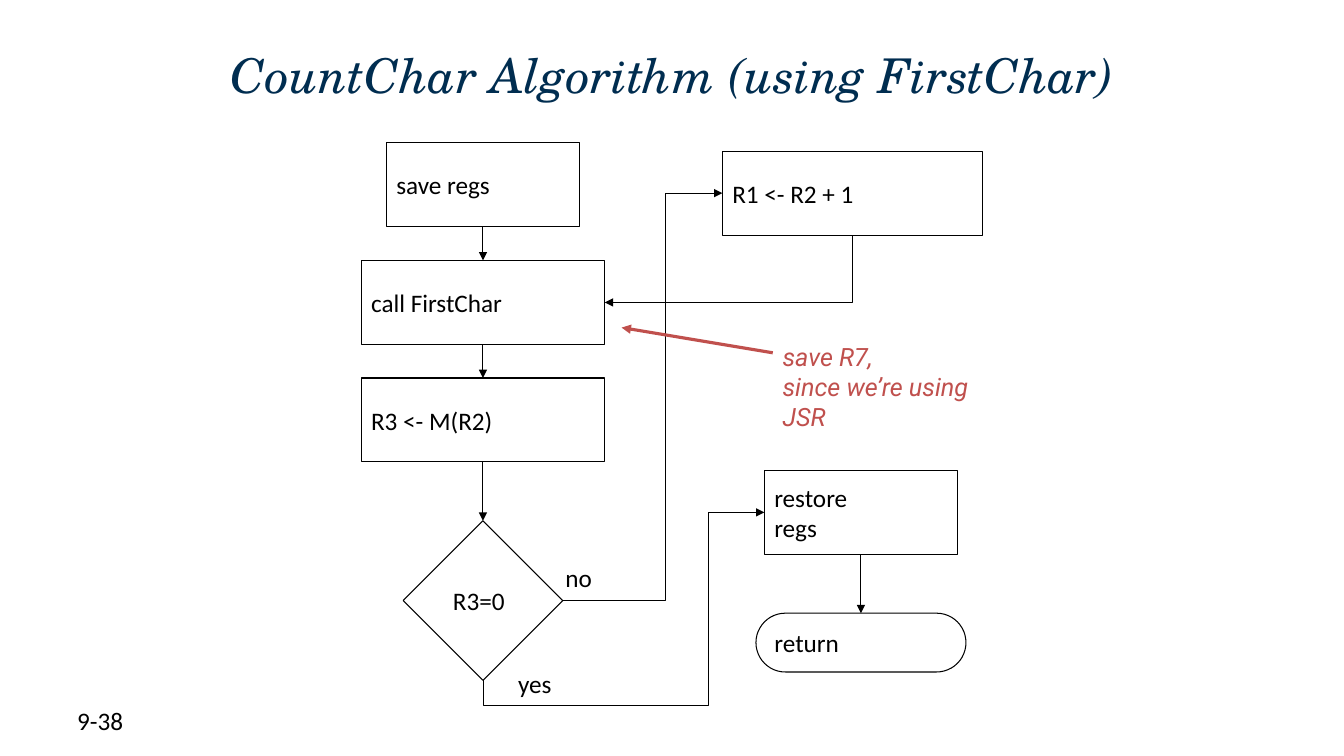
from dataclasses import dataclass

from lxml.etree import SubElement
from pptx import Presentation
from pptx.dml.color import RGBColor
from pptx.enum.shapes import MSO_CONNECTOR as Link, MSO_SHAPE as Shape
from pptx.enum.text import MSO_ANCHOR as Anchor, PP_ALIGN as Align
from pptx.oxml.ns import qn
from pptx.util import Pt

TOP, LEFT, BOTTOM, RIGHT = range(4)


@dataclass(frozen=True)
class Theme:
    """Colours, fonts and sizes of the slide."""
    ink: str = "000000"
    title: str = "002D50"
    accent: str = "C0504D"
    body_font: str = "Calibri"
    title_font: str = "TeX Gyre Schola"
    note_font: str = "Roboto"
    body_size: float = 18
    title_size: float = 34.2
    thin: float = 0.75
    thick: float = 2.25


class Flowchart:
    """Draws flowchart elements on one slide, in points."""

    def __init__(self, slide, theme):
        """Keep the slide and its style."""
        self.shapes = slide.shapes
        self.theme = theme

    def add_words(self, shape, text, color=None, font=None, size=None,
                  italic=False, align=Align.LEFT, anchor=Anchor.MIDDLE,
                  wrap=True):
        """Fill a shape with styled lines of text."""
        frame = shape.text_frame
        frame.word_wrap = wrap
        frame.vertical_anchor = anchor
        for index, line in enumerate(text.split("\n")):
            paragraph = frame.add_paragraph() if index else frame.paragraphs[0]
            paragraph.alignment = align
            run = paragraph.add_run()
            run.text = line
            run.font.name = font or self.theme.body_font
            run.font.size = Pt(size or self.theme.body_size)
            run.font.italic = italic
            run.font.color.rgb = RGBColor.from_string(color or self.theme.ink)

    def label(self, text, left, top, width, height, anchor=Anchor.TOP, **style):
        """Add a text box."""
        box = self.shapes.add_textbox(Pt(left), Pt(top), Pt(width), Pt(height))
        self.add_words(box, text, anchor=anchor, **style)

    def step(self, text, center, top, width, height=60, kind=Shape.RECTANGLE):
        """Add an outlined flowchart step around a vertical axis."""
        step = self.shapes.add_shape(
            kind, Pt(center - width / 2), Pt(top), Pt(width), Pt(height))
        step.shadow.inherit = False
        step.fill.background()
        step.line.color.rgb = RGBColor.from_string(self.theme.ink)
        step.line.width = Pt(self.theme.thin)
        if kind == Shape.ROUNDED_RECTANGLE:
            step.adjustments[0] = 0.5
        self.add_words(step, text)
        return step

    def arrow(self, start=(0, 0), end=(0, 0), kind=Link.STRAIGHT,
              color=None, width=None):
        """Add a line with an arrowhead at its end."""
        arrow = self.shapes.add_connector(kind, *map(Pt, (*start, *end)))
        arrow.line.color.rgb = RGBColor.from_string(color or self.theme.ink)
        arrow.line.width = Pt(width or self.theme.thin)
        properties = arrow._element.spPr
        SubElement(properties.find(qn("a:ln")), qn("a:tailEnd"), type="triangle")
        SubElement(properties, qn("a:effectLst"))
        return arrow

    def join(self, source, target, exit_side=BOTTOM, entry_side=TOP,
             kind=Link.STRAIGHT):
        """Glue an arrow between two steps."""
        arrow = self.arrow(kind=kind)
        arrow.begin_connect(source, exit_side)
        arrow.end_connect(target, entry_side)
        return arrow

    def elbow(self, source, target, exit_side, entry_side, preset, *bends):
        """Glue a bent arrow, turned a quarter when it leaves downwards."""
        arrow = self.join(source, target, exit_side, entry_side, Link.ELBOW)
        properties = arrow._element.spPr
        geometry = properties.find(qn("a:prstGeom"))
        geometry.set("prst", preset)
        guides = geometry.find(qn("a:avLst"))
        for number, bend in enumerate(bends, 1):
            SubElement(guides, qn("a:gd"), name=f"adj{number}",
                       fmla=f"val {round(bend * 100000)}")
        if exit_side == BOTTOM:
            rise = arrow.end_y < arrow.begin_y
            rightward = arrow.end_x > arrow.begin_x
            shift = (arrow.width - arrow.height) // 2
            arrow.left, arrow.top = arrow.left + shift, arrow.top - shift
            arrow.width, arrow.height = arrow.height, arrow.width
            frame = properties.find(qn("a:xfrm"))
            frame.set("rot", str(90 * 60000))
            frame.set("flipH", str(int(rise)))
            frame.set("flipV", str(int(rightward)))


def main():
    """Build the slide and save it."""
    deck = Presentation()
    deck.slide_width, deck.slide_height = Pt(960), Pt(540)
    theme = Theme()
    chart = Flowchart(deck.slides.add_slide(deck.slide_layouts[6]), theme)

    chart.label("9-38", 48, 500.4, 224, 28.8)
    chart.label("CountChar Algorithm (using FirstChar)", 48, 27.4, 864, 52,
                anchor=Anchor.MIDDLE, align=Align.CENTER, italic=True,
                color=theme.title, font=theme.title_font, size=theme.title_size)

    main_axis, exit_axis = 345, 615
    save = chart.step("save regs", main_axis, 102, 138)
    call = chart.step("call FirstChar", main_axis, 186, 174)
    load = chart.step("R3 <- M(R2)", main_axis, 270, 174)
    test = chart.step("R3=0", main_axis, 372, 114, 114, Shape.DIAMOND)
    advance = chart.step("R1 <- R2 + 1", 609, 108, 186)
    restore = chart.step("restore\nregs", exit_axis, 336, 138)
    finish = chart.step("return", exit_axis, 438, 150, 42,
                        Shape.ROUNDED_RECTANGLE)

    for source, target in ((save, call), (call, load), (load, test),
                           (restore, finish)):
        chart.join(source, target)
    chart.elbow(test, advance, RIGHT, LEFT, "bentConnector3", 0.645)
    chart.elbow(test, restore, BOTTOM, LEFT, "bentConnector4", -0.15, 0.8)
    chart.elbow(advance, call, BOTTOM, RIGHT, "bentConnector2")

    chart.label("no", 396.7, 398.2, 34.6, 28.8, wrap=False)
    chart.label("yes", 363, 473.8, 39, 28.8, wrap=False)
    chart.label("save R7,\nsince we’re using JSR", 552, 240, 180, 51,
                italic=True, color=theme.accent, font=theme.note_font)
    chart.arrow((552, 252), (444, 234), color=theme.accent, width=theme.thick)

    deck.save("out.pptx")


if __name__ == "__main__":
    main()
